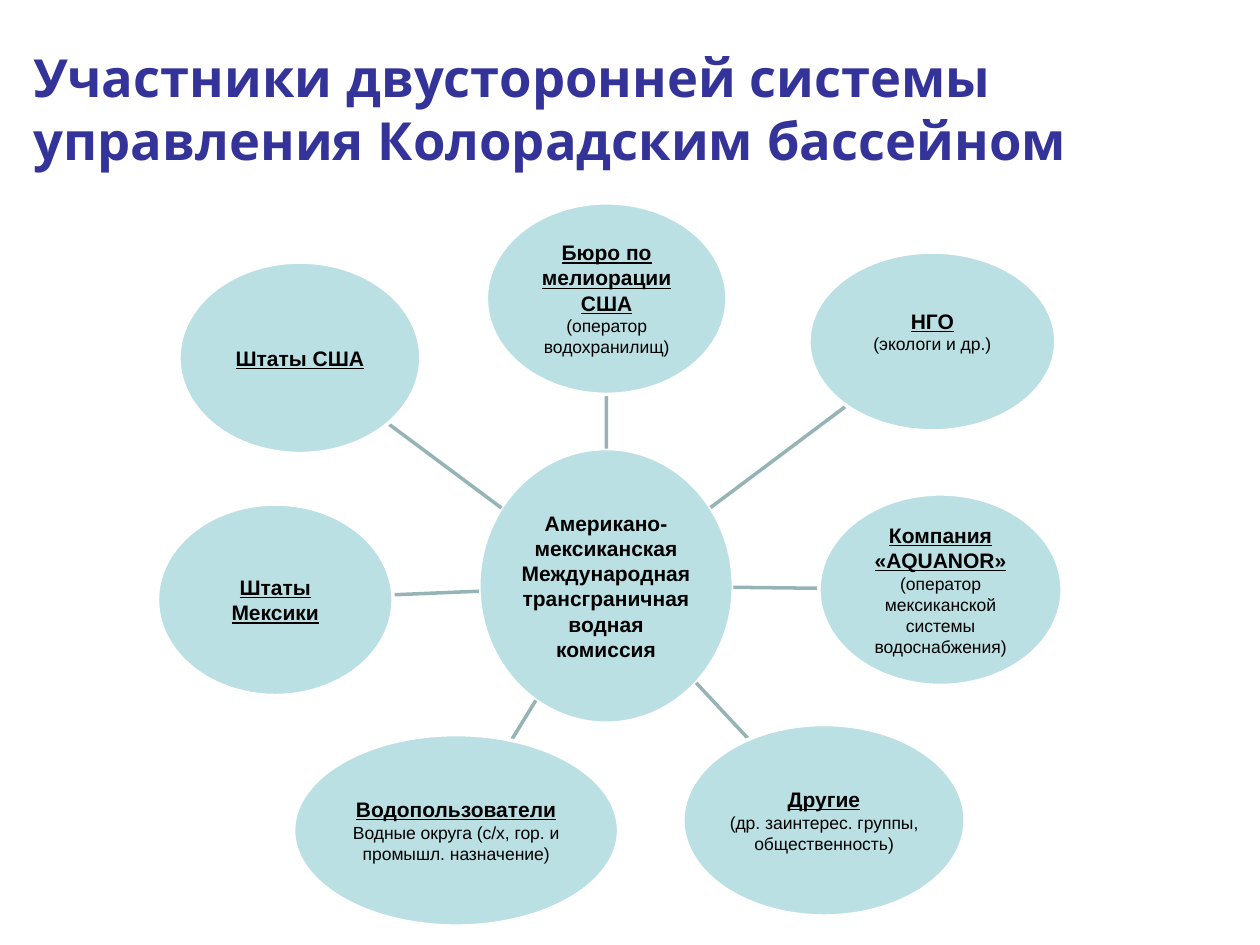
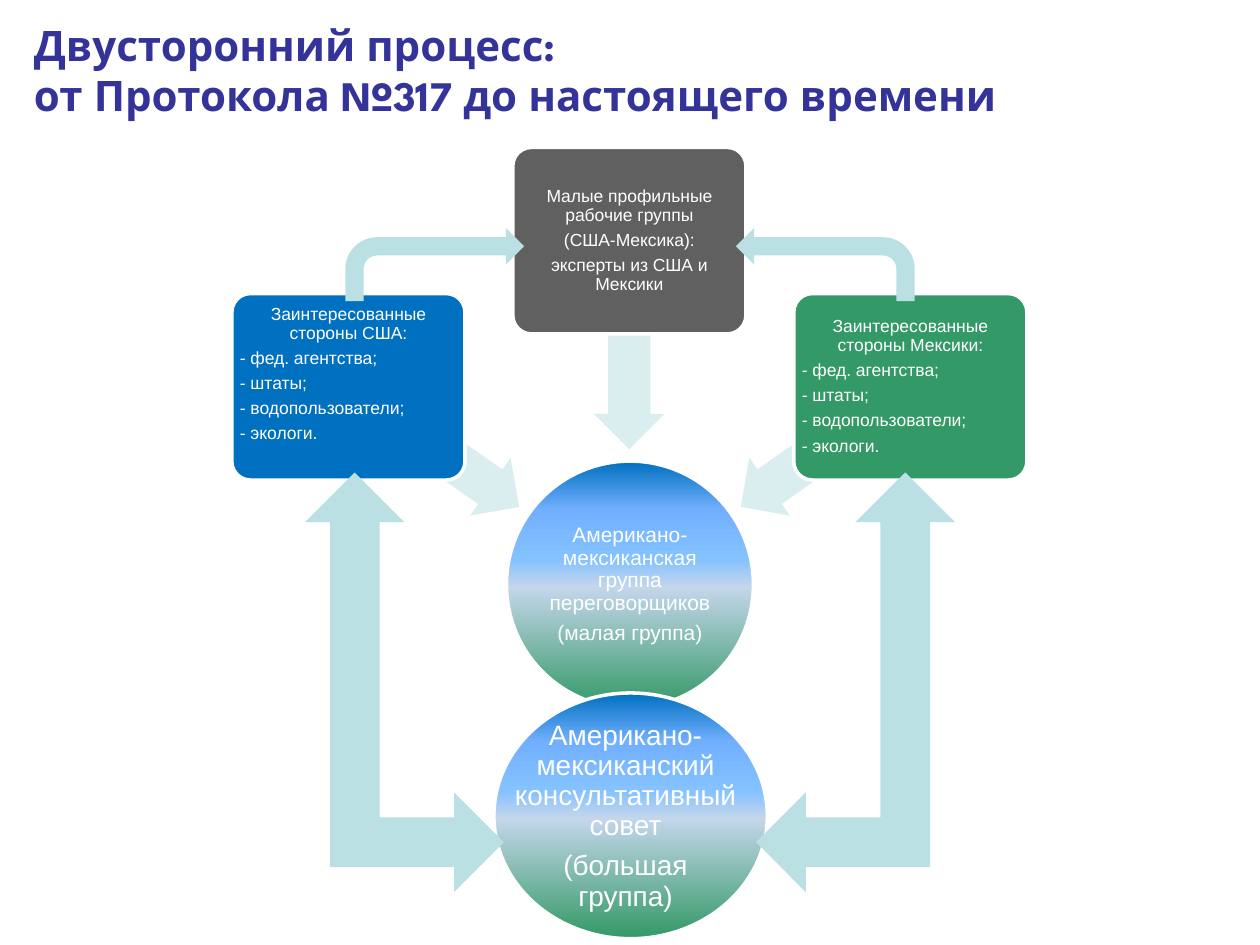
from math import hypot

from lxml import etree
from pptx import Presentation
from pptx.dml.color import RGBColor
from pptx.enum.shapes import MSO_CONNECTOR, MSO_SHAPE
from pptx.enum.text import MSO_ANCHOR, PP_ALIGN
from pptx.oxml.ns import qn
from pptx.util import Pt

PX = 9144
SLIDE_WIDTH, SLIDE_HEIGHT = 1000, 750

WHITE = RGBColor(0xFF, 0xFF, 0xFF)
BLACK = RGBColor(0x00, 0x00, 0x00)
TITLE_BLUE = RGBColor(0x33, 0x33, 0x99)
PALE_TEAL = RGBColor(0xBB, 0xE0, 0xE3)
FAINT_TEAL = RGBColor(0xDA, 0xED, 0xEF)
SPOKE_TEAL = RGBColor(0x96, 0xB3, 0xB6)
BLUE = RGBColor(0x00, 0x70, 0xC0)
GREEN = RGBColor(0x33, 0x99, 0x66)
GRAY = RGBColor(0x60, 0x60, 0x60)
GRADIENT = [
    (0, BLUE),
    (20, RGBColor(0x72, 0xB0, 0xFF)),
    (40, RGBColor(0x85, 0xC2, 0xFF)),
    (51, RGBColor(0xC4, 0xD6, 0xEB)),
    (100, GREEN),
]

TITLE_FONT = "League Spartan"
BODY_FONT = "Arial"
CENTER, LEFT = PP_ALIGN.CENTER, PP_ALIGN.LEFT

MEMBERS_TITLE = "Участники двусторонней системы управления Колорадским бассейном"
COMMISSION = "Американо-мексиканская Международная трансграничная водная комиссия"
COMMISSION_BOX = (380, 356, 202, 218)
MEMBERS = [
    ("Бюро по мелиорации США", "(оператор водохранилищ)", (386, 161, 191, 152), 1),
    ("НГО", "(экологи и др.)", (642, 200, 196, 142), 17),
    ("Компания «AQUANOR»", "(оператор мексиканской системы водоснабжения)",
     (650, 392, 193, 152), 1),
    ("Другие", "(др. заинтерес. группы, общественность)", (542, 575, 224, 152), 1),
    ("Штаты Мексики", "", (125, 400, 187, 152), 1),
    ("Водопользователи", "Водные округа (с/х, гор. и промышл. назначение)",
     (233, 583, 258, 152), 1),
    ("Штаты США", "", (142, 208, 192, 152), 1),
]

PROCESS_TITLE = "Двусторонний процесс:\vот Протокола №317 до настоящего времени"
NEGOTIATORS = ["Американо-мексиканская группа переговорщиков", "(малая группа)"]
NEGOTIATORS_BOX = (402, 366, 196, 196)
COUNCIL = ["Американо-мексиканский консультативный совет", "(большая\vгруппа)"]
COUNCIL_BOX = (392, 550, 217, 195)
COUNCIL_TEXT_BOX = (403, 579, 187, 138)
INTERESTS = ["- фед. агентства;", "- штаты;", "- водопользователи;", "- экологи."]
EXPERTS = ["Малые профильные рабочие группы", "(США-Мексика):", "эксперты из США и Мексики"]
CARD_SIZE = (185, 148)
PARTIES = [
    (["Заинтересованные стороны США:"], INTERESTS, (184, 233), BLUE, 22, (262, 327), 215),
    (EXPERTS, [], (407, 117), GRAY, 2, (417, 246), 270),
    (["Заинтересованные стороны Мексики:"], INTERESTS, (630, 233), GREEN, 2, (573, 327), 325),
]
INFLOW_SIZE = (165, 56)
BENT_ARROW_BOX = (274, 181, 142, 58)
FEEDBACK_ARROW_BOX = (600, 375, 158, 333)


def emu(lengths):
    return [round(length * PX) for length in lengths]


def mirrored(box):
    left, top, width, height = box
    return SLIDE_WIDTH - left - width, top, width, height


def set_margins(frame, margin, bottom=None):
    frame.margin_left = frame.margin_right = frame.margin_top = margin * PX
    frame.margin_bottom = (margin if bottom is None else bottom) * PX
    frame.vertical_anchor = MSO_ANCHOR.MIDDLE
    frame.word_wrap = True


def add_paragraphs(frame, texts, size, color, font=BODY_FONT, align=CENTER,
                   bold=False, underline=False, dense=False):
    for text in texts:
        first = frame.paragraphs[0]
        paragraph = frame.add_paragraph() if first.text else first
        paragraph.text = text
        paragraph.alignment = align
        if dense:
            paragraph.line_spacing = 0.9
            paragraph.space_after = Pt(size * 0.35)
        paragraph.font.name = font
        paragraph.font.size = Pt(size)
        paragraph.font.bold = bold
        paragraph.font.underline = underline
        paragraph.font.color.rgb = color


def add_textbox(slide, box, margin):
    frame = slide.shapes.add_textbox(*emu(box)).text_frame
    set_margins(frame, margin)
    return frame


def add_title(slide, text, top, size):
    frame = add_textbox(slide, (17, top, 900, 95), 10)
    frame.margin_top = frame.margin_bottom = 5 * PX
    add_paragraphs(frame, [text], size, TITLE_BLUE, TITLE_FONT, LEFT, bold=True)


def fill_gradient(shape):
    shape.fill.gradient()
    shape.fill.gradient_angle = 270
    stops = shape.element.spPr.find(qn("a:gradFill")).find(qn("a:gsLst"))
    for stop in list(stops):
        stops.remove(stop)
    for percent, color in GRADIENT:
        stop = etree.SubElement(stops, qn("a:gs"), pos=str(percent * 1000))
        etree.SubElement(stop, qn("a:srgbClr"), val=str(color))


def add_figure(slide, kind, box, color=None, outlined=True):
    shape = slide.shapes.add_shape(kind, *emu(box))
    shape.shadow.inherit = False
    if color is None:
        fill_gradient(shape)
    else:
        shape.fill.solid()
        shape.fill.fore_color.rgb = color
    if outlined:
        shape.line.color.rgb = WHITE
        shape.line.width = Pt(2)
    else:
        shape.line.fill.background()
    return shape


def flip_horizontally(shape):
    shape.element.spPr.find(qn("a:xfrm")).set("flipH", "1")


def center_of(box):
    left, top, width, height = box
    return left + width / 2, top + height / 2


def edge_toward(box, target):
    x, y = center_of(box)
    dx, dy = target[0] - x, target[1] - y
    reach = 1 / hypot(dx / (box[2] / 2), dy / (box[3] / 2))
    return x + dx * reach, y + dy * reach


def add_spoke(slide, hub, rim):
    start = edge_toward(hub, center_of(rim))
    end = edge_toward(rim, center_of(hub))
    spoke = slide.shapes.add_connector(MSO_CONNECTOR.STRAIGHT, *emu(start + end))
    spoke.line.color.rgb = SPOKE_TEAL
    spoke.line.width = Pt(2)
    etree.SubElement(spoke.element.spPr, qn("a:effectLst"))


def build_members(slide):
    add_title(slide, MEMBERS_TITLE, 38, 30)
    hub = add_figure(slide, MSO_SHAPE.OVAL, COMMISSION_BOX, PALE_TEAL)
    set_margins(hub.text_frame, 1)
    add_paragraphs(hub.text_frame, [COMMISSION], 12, BLACK, bold=True)
    for name, role, box, bottom in MEMBERS:
        add_spoke(slide, COMMISSION_BOX, box)
        frame = add_figure(slide, MSO_SHAPE.OVAL, box, PALE_TEAL).text_frame
        set_margins(frame, 1, bottom)
        add_paragraphs(frame, [name], 12, BLACK, bold=True, underline=True)
        if role:
            add_paragraphs(frame, [role], 10, BLACK)


def build_process(slide):
    add_title(slide, PROCESS_TITLE, 8, 24)
    negotiators = add_figure(slide, MSO_SHAPE.OVAL, NEGOTIATORS_BOX)
    set_margins(negotiators.text_frame, 1)
    add_paragraphs(negotiators.text_frame, NEGOTIATORS, 12, WHITE, dense=True)

    for heading, interests, corner, color, bottom, arrow_corner, rotation in PARTIES:
        inflow = add_figure(slide, MSO_SHAPE.LEFT_ARROW, arrow_corner + INFLOW_SIZE,
                            FAINT_TEAL, outlined=False)
        inflow.adjustments[0] = 0.6
        inflow.adjustments[1] = 0.5
        inflow.rotation = rotation
        card = add_figure(slide, MSO_SHAPE.ROUNDED_RECTANGLE, corner + CARD_SIZE, color)
        card.adjustments[0] = 0.1
        set_margins(card.text_frame, 2, bottom)
        add_paragraphs(card.text_frame, heading, 10, WHITE, dense=True)
        add_paragraphs(card.text_frame, interests, 10, WHITE, align=LEFT, dense=True)

    add_figure(slide, MSO_SHAPE.OVAL, COUNCIL_BOX)
    council = add_textbox(slide, COUNCIL_TEXT_BOX, 1)
    add_paragraphs(council, COUNCIL, 16, WHITE, dense=True)

    for kind, box in [(MSO_SHAPE.BENT_ARROW, BENT_ARROW_BOX),
                      (MSO_SHAPE.LEFT_UP_ARROW, FEEDBACK_ARROW_BOX)]:
        add_figure(slide, kind, box, PALE_TEAL, outlined=False)
        flip_horizontally(add_figure(slide, kind, mirrored(box), PALE_TEAL, outlined=False))


def main():
    presentation = Presentation()
    presentation.slide_width, presentation.slide_height = emu((SLIDE_WIDTH, SLIDE_HEIGHT))
    for build in (build_members, build_process):
        build(presentation.slides.add_slide(presentation.slide_layouts[6]))
    presentation.save("out.pptx")


if __name__ == "__main__":
    main()
